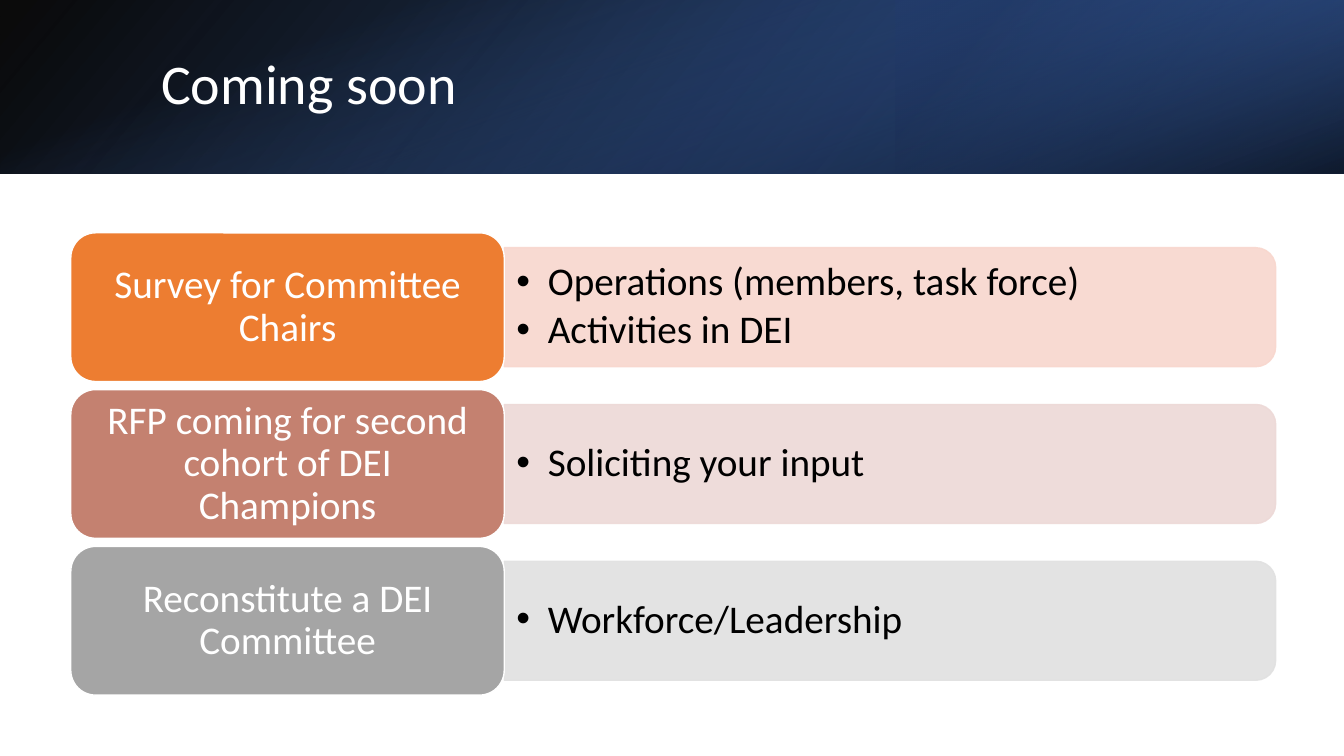
from pptx import Presentation
from pptx.dml.color import RGBColor
from pptx.enum.shapes import MSO_SHAPE
from pptx.enum.text import MSO_ANCHOR, PP_ALIGN
from pptx.oxml.ns import qn
from pptx.util import Pt

RECT = MSO_SHAPE.RECTANGLE
ROUND = MSO_SHAPE.ROUNDED_RECTANGLE
TAB = MSO_SHAPE.ROUND_2_SAME_RECTANGLE
MIDDLE = MSO_ANCHOR.MIDDLE
LEFT, CENTER = PP_ALIGN.LEFT, PP_ALIGN.CENTER

BLACK = RGBColor(0x00, 0x00, 0x00)
WHITE = RGBColor(0xFF, 0xFF, 0xFF)
NAVY = RGBColor(0x20, 0x38, 0x64)
ROYAL = RGBColor(0x2F, 0x55, 0x97)
BLUE = RGBColor(0x44, 0x72, 0xC4)
ORANGE = RGBColor(0xED, 0x7D, 0x31)
PEACH = RGBColor(0xF8, 0xD7, 0xCE)
CLAY = RGBColor(0xC4, 0x81, 0x70)
ROSE = RGBColor(0xED, 0xD9, 0xD7)
GRAY = RGBColor(0xA5, 0xA5, 0xA5)
SILVER = RGBColor(0xE1, 0xE1, 0xE1)

WIDE, HIGH = 960, 540
HEAD = 124
TOP, PITCH = 166.3, 112
LABEL_X, LABEL_W, LABEL_H = 50.6, 309.6, 106.2
BAR_W, BAR_H = 551, 85
PAD = 5.4

ROWS = [
    ("Survey for Committee Chairs", ORANGE, PEACH,
     ["Operations (members, task force)", "Activities in DEI"]),
    ("RFP coming for second cohort of DEI Champions", CLAY, ROSE,
     ["Soliciting your input"]),
    ("Reconstitute a DEI Committee", GRAY, SILVER,
     ["Workforce/Leadership"]),
]


def fade(shape, *levels):
    """Set the opacity, in percent, of the shape's colours in order."""
    colors = list(shape._element.spPr.iter(qn("a:srgbClr")))
    for color, level in zip(colors, levels):
        alpha = color.makeelement(qn("a:alpha"), {"val": str(level * 1000)})
        color.append(alpha)


def add_bullet(para, indent):
    props = para._p.get_or_add_pPr()
    props.set("marL", str(Pt(indent)))
    props.set("indent", str(-Pt(indent)))
    font = props.makeelement(qn("a:buFont"), {"typeface": "Arial"})
    mark = props.makeelement(qn("a:buChar"), {"char": "•"})
    props.extend([font, mark])


class Deck:
    def __init__(self, font):
        self.font = font
        self.prs = Presentation()
        self.prs.slide_width, self.prs.slide_height = Pt(WIDE), Pt(HIGH)
        self.slide = self.prs.slides.add_slide(self.prs.slide_layouts[6])

    def shape(self, kind, x, y, w, h, turn=0, flip=False):
        """Add a shape whose box is given before it is turned."""
        shape = self.slide.shapes.add_shape(kind, Pt(x), Pt(y), Pt(w), Pt(h))
        shape.shadow.inherit = False
        shape.rotation = turn
        if flip:
            shape._element.spPr.xfrm.set("flipH", "1")
        return shape

    def shade(self, box, stops, angle, **place):
        """Add a gradient panel; stops are (percent, colour, opacity)."""
        panel = self.shape(RECT, *box, **place)
        panel.line.fill.background()
        panel.fill.gradient()
        panel.fill.gradient_angle = 360 - angle
        for stop, (spot, color, _) in zip(panel.fill.gradient_stops, stops):
            stop.position = spot / 100
            stop.color.rgb = color
        fade(panel, *[level for _, _, level in stops])

    def block(self, kind, box, fill, edge, turn=0):
        block = self.shape(kind, *box, turn=turn)
        block.fill.solid()
        block.fill.fore_color.rgb = fill
        block.line.color.rgb = edge
        block.line.width = Pt(1)
        return block

    def text(self, lines, x, y, w, h, size=28, color=BLACK, align=LEFT,
             inset=(8.64, 4.32), after=0, indent=0):
        box = self.slide.shapes.add_textbox(Pt(x), Pt(y), Pt(w), Pt(h))
        frame = box.text_frame
        frame.word_wrap = True
        frame.vertical_anchor = MIDDLE
        frame.margin_left = frame.margin_right = Pt(inset[0])
        frame.margin_top = frame.margin_bottom = Pt(inset[1])
        for i, line in enumerate(lines):
            para = frame.add_paragraph() if i else frame.paragraphs[0]
            para.alignment = align
            para.line_spacing = 0.9
            para.space_after = Pt(after)
            if indent:
                add_bullet(para, indent)
            run = para.add_run()
            run.text = line
            run.font.name = self.font
            run.font.size = Pt(size)
            run.font.color.rgb = color

    def row(self, y, label, fill, tint, points):
        mid = y + LABEL_H / 2
        bar_x = LABEL_X + LABEL_W
        tall = (bar_x + (BAR_W - BAR_H) / 2, mid - BAR_W / 2, BAR_H, BAR_W)
        bar = self.block(TAB, tall, tint, tint, turn=90)
        fade(bar, 90, 90)
        self.text(points, bar_x, mid - 38.5, BAR_W - PAD, 77,
                  after=4.2, indent=22.5)
        self.block(ROUND, (LABEL_X, y, LABEL_W, LABEL_H), fill, WHITE)
        self.text([label], LABEL_X + PAD, y + PAD, LABEL_W - 2 * PAD,
                  LABEL_H - 2 * PAD, color=WHITE, align=CENTER)


def main():
    deck = Deck("Calibri")
    deck.shade((0, 0, WIDE, HEAD),
               [(0, BLACK, 96), (100, ROYAL, 100)], 140, flip=True)
    deck.shade((WIDE * 2 / 3, 0, WIDE / 3, HEAD),
               [(19, NAVY, 68), (100, BLUE, 79)], 320, turn=180, flip=True)
    side = (WIDE - HEAD) / 2
    deck.shade((side, -side, HEAD, WIDE),
               [(23, BLUE, 0), (99, BLACK, 74)], 340, turn=90)
    deck.text(["Coming soon"], 108, 27.4, 790.6, 69, size=40, color=WHITE,
              inset=(7.2, 3.6))
    for i, row in enumerate(ROWS):
        deck.row(TOP + i * PITCH, *row)
    deck.prs.save("out.pptx")


if __name__ == "__main__":
    main()
